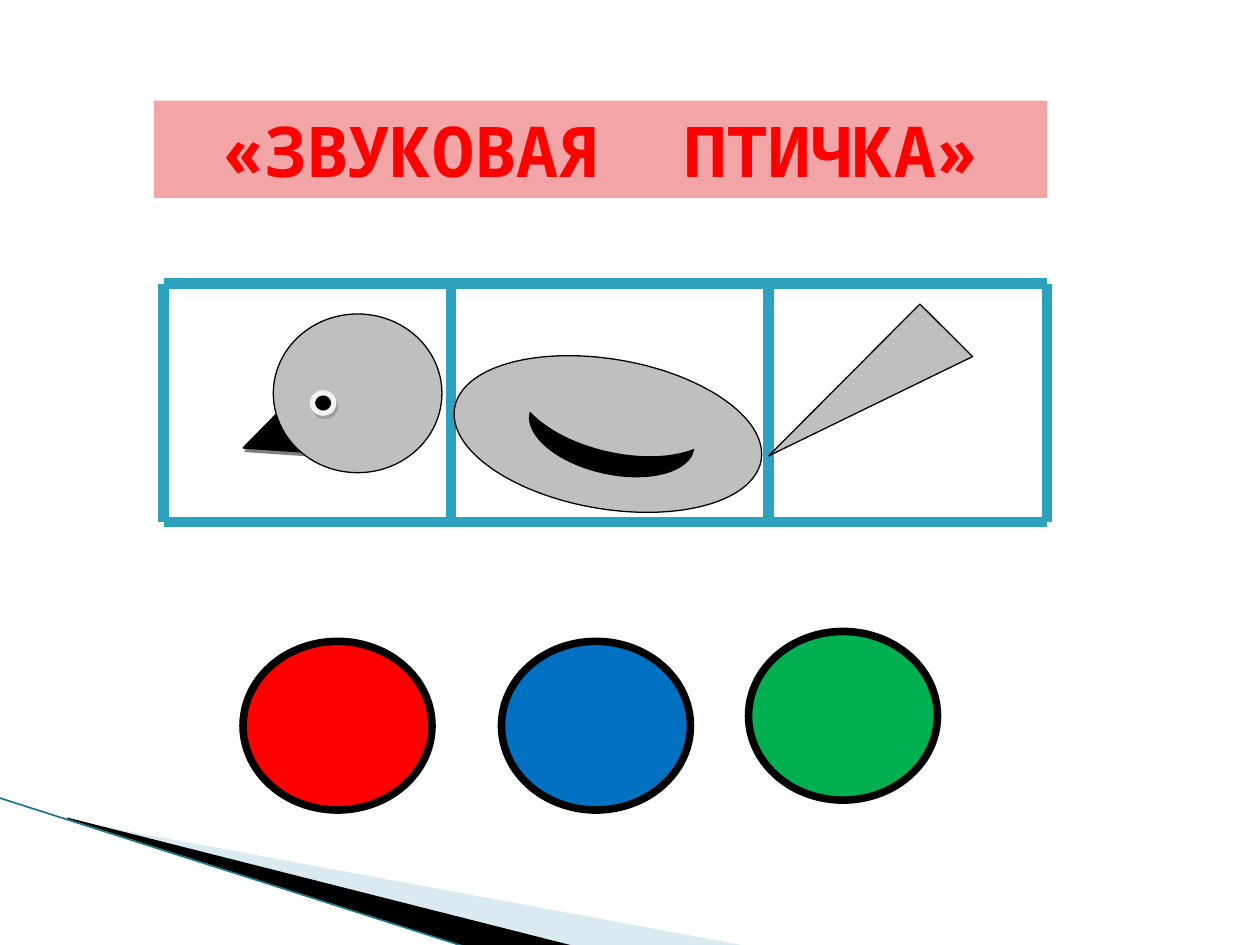
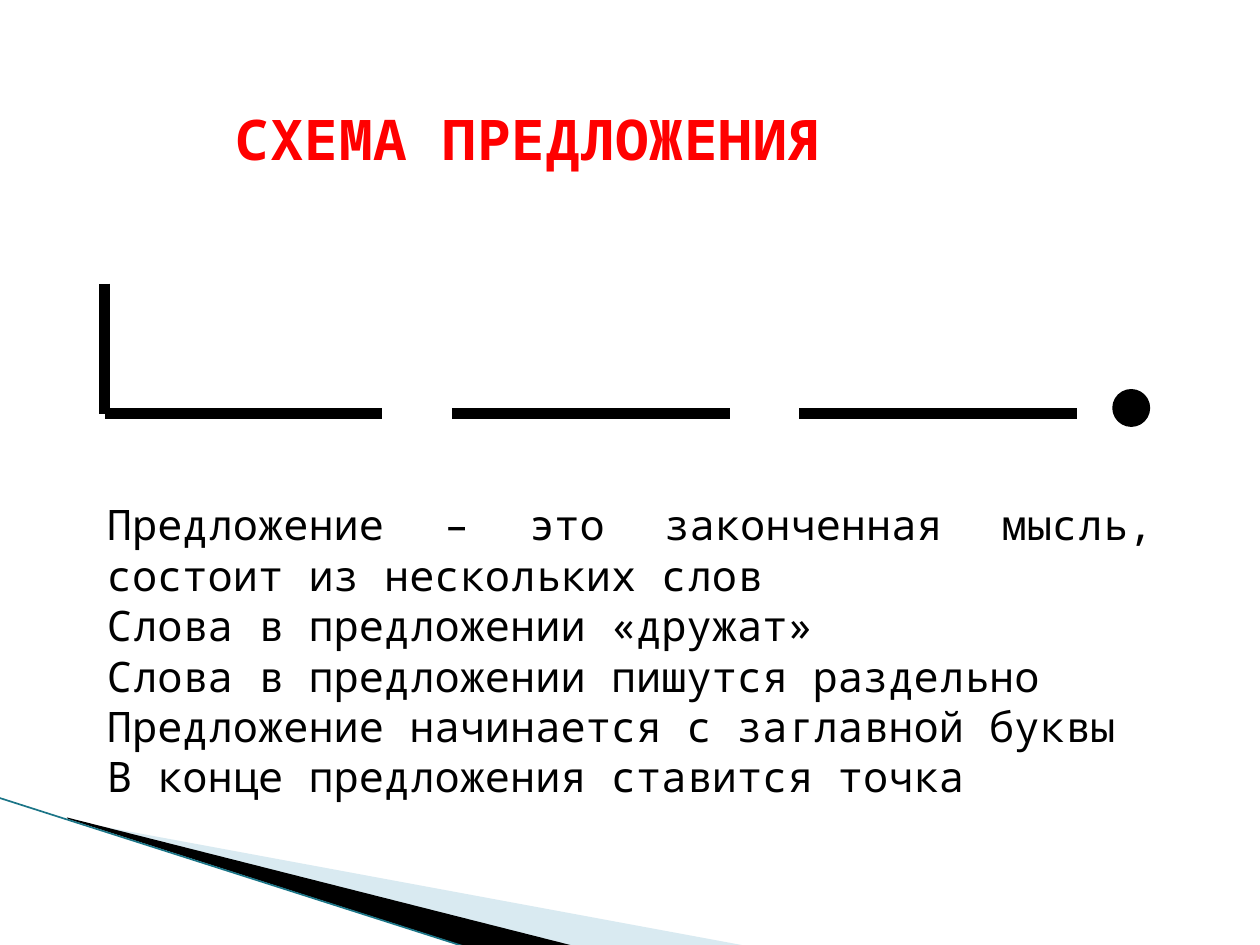
from lxml import etree
from pptx import Presentation
from pptx import util as u
from pptx.dml import color
from pptx.enum import shapes, text
from pptx.oxml import ns

FONT = "Noto Sans Mono"
BLACK, RED, GREY = "000000", "FF0000", "BFBFBF"
TEAL, DEEP_TEAL, PALE_BLUE, PINK = "2DA2BF", "1B7587", "A0CBDC", "F2A4A7"
KIND = shapes.MSO_SHAPE
ALIGN = text.PP_ALIGN
RULES = [
    "Предложение – это законченная мысль, состоит из нескольких слов",
    "Слова в предложении «дружат»",
    "Слова в предложении пишутся раздельно",
    "Предложение начинается с заглавной буквы",
    "В конце предложения ставится точка",
]


def rgb(value):
    """Turn a hex string into a colour."""
    return color.RGBColor.from_string(value)


def add_child(parent, tag, **values):
    """Append a DrawingML element with the given attributes."""
    child = etree.SubElement(parent, ns.qn(tag))
    for name, value in values.items():
        child.set(name, str(value))
    return child


def apply(target, values):
    """Set the attributes of a target from a dict."""
    for name, value in values.items():
        setattr(target, name, value)


def place(item, box):
    """Move an item to a box of left, top, width and height in centimetres."""
    names = ("left", "top", "width", "height")
    apply(item, dict(zip(names, map(u.Cm, box))))


def paint(shape, fill, line=None, weight=0, alpha=None):
    """Give a shape a flat fill and an optional outline."""
    shape.shadow.inherit = False
    shape.fill.solid()
    shape.fill.fore_color.rgb = rgb(fill)
    if alpha:
        tint = shape.element.spPr.find(".//" + ns.qn("a:srgbClr"))
        add_child(tint, "a:alpha", val=alpha * 1000)
    if line:
        shape.line.color.rgb = rgb(line)
        shape.line.width = u.Pt(weight)
    else:
        shape.line.fill.background()


def add_figure(page, kind, box, fill, line=BLACK, weight=0.75, turn=0):
    """Draw a preset shape, turned by some degrees."""
    shape = page.shapes.add_shape(kind, *map(u.Cm, box))
    paint(shape, fill, line, weight)
    shape.rotation = turn
    return shape


def add_line(page, start, end, tone, weight=6):
    """Draw a straight line between two points."""
    line = page.shapes.add_connector(
        shapes.MSO_CONNECTOR.STRAIGHT, *map(u.Cm, (*start, *end)))
    line.line.color.rgb = rgb(tone)
    line.line.width = u.Pt(weight)
    add_child(line.element.spPr, "a:effectLst")
    return line


def cast_shadow(shape, alpha):
    """Add a short grey shadow below and to the right of a shape."""
    effects = shape.element.spPr.find(ns.qn("a:effectLst"))
    shadow = add_child(effects, "a:outerShdw", dist=u.Pt(2.2),
                       dir=63 * 60000, algn="ctr", rotWithShape=0)
    tint = add_child(shadow, "a:srgbClr", val="7F7F7F")
    add_child(tint, "a:alpha", val=alpha * 1000)


def add_span(para, words, size, tone, bold=False, spacing=0):
    """Add a run of text, with letter spacing in points."""
    span = para.add_run()
    span.text = words
    apply(span.font, {"name": FONT, "size": u.Pt(size), "bold": bold})
    span.font.color.rgb = rgb(tone)
    if spacing:
        span.font._element.set("spc", str(round(spacing * 100)))


def add_title(page, box, spans, size, align):
    """Fill the title placeholder with pairs of words and letter spacing."""
    title = page.shapes.title
    place(title, box)
    apply(title.text_frame, {"word_wrap": True,
                             "auto_size": text.MSO_AUTO_SIZE.NONE,
                             "vertical_anchor": text.MSO_ANCHOR.MIDDLE})
    para = title.text_frame.paragraphs[0]
    para.alignment = align
    for words, spacing in spans:
        add_span(para, words, size, RED, True, spacing)
    return title


def add_corner(deck, page):
    """Draw the corner wedges and move them to the slide master."""
    wedges = [
        (PALE_BLUE, 40, [(1.4, 16.54), (15.11, 19.08), (11.58, 19.08), (1.4, 16.51)]),
        (BLACK, None, [(1.35, 16.48), (11.61, 19.08), (9.45, 19.1), (1.37, 16.51)]),
    ]
    parts = []
    for fill, alpha, points in wedges:
        start, *rest = [(u.Cm(x), u.Cm(y)) for x, y in points]
        builder = page.shapes.build_freeform(*start)
        builder.add_line_segments(rest, close=True)
        wedge = builder.convert_to_shape()
        paint(wedge, fill, alpha=alpha)
        parts.append(wedge)
    parts.append(add_line(page, (-0.03, 16.08), (9.42, 19.1), DEEP_TEAL, 0.95))
    for number, part in enumerate(parts, 100):
        part.element.xpath(".//p:cNvPr")[0].set("id", str(number))
        deck.slide_master.shapes.element.append(part.element)


def add_frame(page, box):
    """Draw the three-cell frame around the bird."""
    left, top, width, height = box
    right, bottom = left + width, top + height
    for y in (top, bottom):
        add_line(page, (left, y), (right, y), TEAL)
    for x in (left, left + 5.79, left + 12.19, right):
        add_line(page, (x, top), (x, bottom), TEAL)


def add_bird(page, box):
    """Draw the bird inside its frame."""
    left, top = box[:2]

    def part(kind, x, y, width, height, *style):
        return add_figure(page, kind, (left + x, top + y, width, height), *style)

    beak = part(KIND.ISOSCELES_TRIANGLE, 1.63, 2.64, 1.22, 0.71,
                BLACK, BLACK, 1, 3.8)
    part(KIND.OVAL, 2.21, 0.61, 3.4, 3.2, GREY)
    part(KIND.OVAL, 5.82, 1.52, 6.27, 3.02, GREY, BLACK, 0.75, 9.7)
    part(KIND.RIGHT_TRIANGLE, 12.09, 1.72, 4.32, 1.5, GREY, BLACK, 0.75, 134.9)
    part(KIND.MOON, 8.51, 1.7, 0.86, 3.38, BLACK, BLACK, 0.75, 282.8)
    eye = part(KIND.OVAL, 3, 2.2, 0.43, 0.41, BLACK, "F2F2F2", 3)
    cast_shadow(beak, 100)
    cast_shadow(eye, 50)


def add_sound_circles(page, box):
    """Draw the red, blue and green sound circles."""
    left, top, width, height = box
    circles = [(0, 0.2, RED), (5.21, 0.2, "0070C0"), (10.19, 0, "00B050")]
    for x, y, fill in circles:
        add_figure(page, KIND.OVAL, (left + x, top + y, 3.81, height - 0.2),
                   fill, BLACK, 4.33)


def add_sentence_scheme(page, box):
    """Draw the capital mark, three word lines and the full stop."""
    left, top, width, height = box
    bottom = top + height
    add_line(page, (left, top), (left, bottom), BLACK)
    for index in range(3):
        start = left + 7 * index
        add_line(page, (start, bottom), (start + 5.6, bottom), BLACK)
    add_figure(page, KIND.OVAL, (left + width - 0.61, bottom - 0.42, 0.61, 0.61),
               BLACK, BLACK, 4.33)


def add_rules(page, box):
    """Fill the body placeholder with the sentence rules."""
    body = page.placeholders[1]
    place(body, box)
    frame = body.text_frame
    apply(frame, {"word_wrap": True, "auto_size": text.MSO_AUTO_SIZE.NONE,
                  "vertical_anchor": text.MSO_ANCHOR.TOP})
    for index, rule in enumerate(RULES):
        para = frame.add_paragraph() if index else frame.paragraphs[0]
        apply(para, {"alignment": ALIGN.JUSTIFY, "space_before": u.Pt(0),
                     "space_after": u.Pt(0)})
        settings = para._p.get_or_add_pPr()
        settings.set("marL", "0")
        settings.set("indent", "0")
        add_child(settings, "a:buNone")
        add_span(para, rule, 24, BLACK)


def build_bird_page(page):
    """Lay out the sound bird slide."""
    spans = [("«ЗВУКОВАЯ", 0), (" ", 24), ("ПТИЧКА»", 0)]
    title = add_title(page, (3.1, 2.03, 18.01, 1.96), spans, 40, ALIGN.CENTER)
    title.fill.solid()
    title.fill.fore_color.rgb = rgb(PINK)
    box = (3.3, 5.72, 17.81, 4.8)
    add_frame(page, box)
    add_bird(page, box)
    add_sound_circles(page, (4.9, 12.73, 14, 3.6))


def build_sentence_page(page):
    """Lay out the sentence scheme slide."""
    add_title(page, (4.5, 1.19, 17.2, 3.18), [("СХЕМА ПРЕДЛОЖЕНИЯ", 0.5)],
              32, ALIGN.LEFT)
    add_sentence_scheme(page, (2.11, 5.72, 21, 2.62))
    add_rules(page, (1.9, 9.93, 21.59, 6.4))


def main():
    """Build the deck and save it."""
    deck = Presentation()
    apply(deck, {"slide_width": u.Cm(25.4), "slide_height": u.Cm(19.05)})
    bird_page = deck.slides.add_slide(deck.slide_layouts[5])
    sentence_page = deck.slides.add_slide(deck.slide_layouts[1])
    add_corner(deck, bird_page)
    build_bird_page(bird_page)
    build_sentence_page(sentence_page)
    deck.save("out.pptx")


if __name__ == "__main__":
    main()
